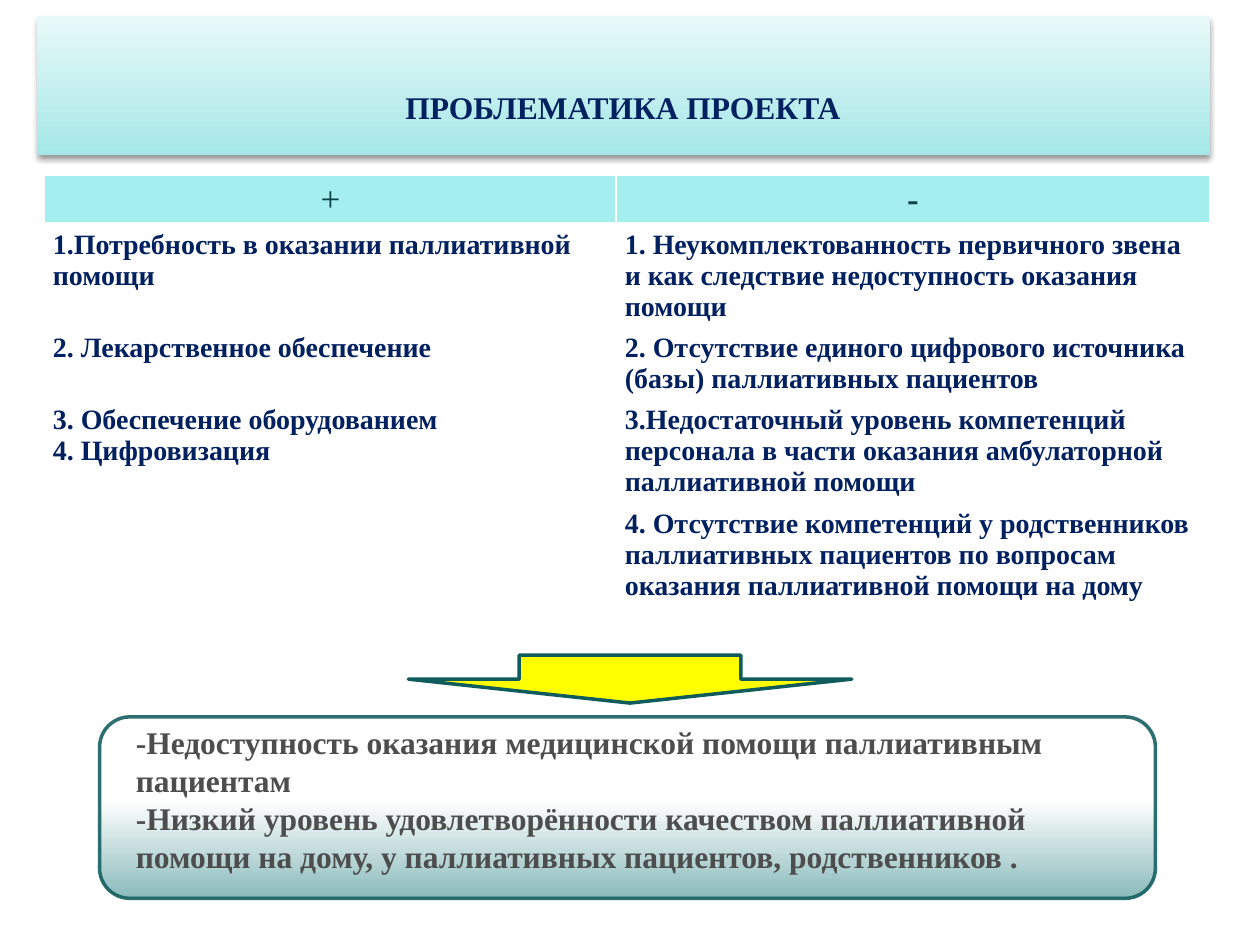
from lxml import etree
from pptx import Presentation
from pptx.dml.color import RGBColor
from pptx.enum import shapes, text
from pptx.oxml import ns
from pptx.util import Inches, Pt

TITLE = "ПРОБЛЕМАТИКА ПРОЕКТА"
ROWS = [
    (["+"], ["-"]),
    (["1.Потребность в оказании паллиативной помощи"],
     ["1. Неукомплектованность первичного звена и как следствие недоступность оказания помощи"]),
    (["2. Лекарственное обеспечение"],
     ["2. Отсутствие единого цифрового источника (базы) паллиативных пациентов"]),
    (["3. Обеспечение оборудованием", "4. Цифровизация"],
     ["3.Недостаточный уровень компетенций персонала в части оказания амбулаторной паллиативной помощи"]),
    ([], ["4. Отсутствие компетенций у родственников паллиативных пациентов по вопросам оказания паллиативной помощи на дому"]),
    ([], []),
    ([], []),
    ([], []),
]
RESULT = [
    "-Недоступность оказания медицинской помощи паллиативным пациентам",
    "-Низкий уровень удовлетворённости качеством паллиативной помощи на дому, у паллиативных пациентов, родственников .",
]
WIDTHS = [4.54, 4.71]
HEIGHTS = [0.35, 0.74, 0.51, 0.74, 0.74, 0.29, 0.22, 0.22]
FONT = "Times New Roman"
HEX = {"navy": "002060", "teal": "105C5D", "head": "A4EEF0", "ink": "0C4344",
       "white": "FFFFFF", "gray": "4D4D4D", "yellow": "FFFF00", "black": "000000"}
BANNER = [(0, "E8F9F9"), (100, "A5E7E7")]
PANEL = [(46, "FFFFFF"), (97, "91BEBF"), (100, "7DB8B9")]


def rgb(name):
    return RGBColor.from_string(HEX[name])


def sub(node, tag, **attrs):
    return etree.SubElement(node, ns.qn("a:" + tag), attrs)


def box(item):
    return [Inches(n) for n in item]


def write(frame, lines, size, color, bold=True, align=text.PP_ALIGN.LEFT):
    frame.word_wrap = True
    for i, line in enumerate(lines):
        para = frame.paragraphs[0] if i == 0 else frame.add_paragraph()
        para.text = line
        para.alignment = align
        font = para.font
        font.name, font.size, font.bold = FONT, Pt(size), bold
        font.color.rgb = rgb(color)


def shade(shape, stops):
    shape.fill.gradient()
    shape.fill.gradient_angle = 270
    group = shape.fill._xPr.find(".//" + ns.qn("a:gsLst"))
    for old in list(group):
        group.remove(old)
    for pos, color in stops:
        stop = sub(group, "gs", pos=str(pos * 1000))
        sub(stop, "srgbClr", val=color)


def edge(cell):
    props = cell._tc.get_or_add_tcPr()
    for side, width in zip("LRTB", (1, 1, 1, 3)):
        line = sub(props, "ln" + side, w=str(Pt(width)))
        sub(sub(line, "solidFill"), "srgbClr", val=HEX["white"])


def add_title(slide):
    title = slide.shapes.title
    title.left, title.top, title.width, title.height = box((0.29, 0.13, 9.31, 1.1))
    shade(title, BANNER)
    glow = sub(sub(title._element.spPr, "effectLst"), "outerShdw",
               blurRad=str(Pt(3)), dist=str(Pt(2)), dir="5400000", rotWithShape="0")
    sub(sub(glow, "srgbClr", val=HEX["black"]), "alpha", val="40000")
    frame = title.text_frame
    frame.vertical_anchor = text.MSO_ANCHOR.MIDDLE
    frame.margin_top, frame.margin_bottom = box((0.39, 0.05))
    write(frame, [TITLE], 18, "navy", align=text.PP_ALIGN.CENTER)


def add_grid(slide):
    grid = slide.shapes.add_table(len(ROWS), len(WIDTHS),
                                  *box((0.35, 1.39, sum(WIDTHS), sum(HEIGHTS)))).table
    grid.first_row = grid.horz_banding = False
    for col, width in zip(grid.columns, WIDTHS):
        col.width = Inches(width)
    for r, (row, height) in enumerate(zip(ROWS, HEIGHTS)):
        grid.rows[r].height = Inches(height)
        for c, lines in enumerate(row):
            cell = grid.cell(r, c)
            edge(cell)
            cell.fill.solid()
            cell.fill.fore_color.rgb = rgb("white" if r else "head")
            cell.margin_left = cell.margin_right = Inches(0.07)
            cell.margin_top = cell.margin_bottom = Inches(0.04)
            if r:
                write(cell.text_frame, lines, 16, "navy")
            else:
                write(cell.text_frame, lines, 20, "ink", c == 1, text.PP_ALIGN.CENTER)
    grid.cell(0, 0).text_frame.paragraphs[0].font.italic = True


def add_shape(slide, kind, place):
    shape = slide.shapes.add_shape(kind, *box(place))
    shape.shadow.inherit = False
    shape.line.color.rgb = rgb("teal")
    shape.line.width = Pt(2)
    return shape


def main():
    deck = Presentation()
    deck.slide_width, deck.slide_height = box((10, 7.5))
    slide = deck.slides.add_slide(deck.slide_layouts[5])
    add_title(slide)
    add_grid(slide)
    arrow = add_shape(slide, shapes.MSO_SHAPE.DOWN_ARROW, (3.24, 5.2, 3.52, 0.38))
    arrow.fill.solid()
    arrow.fill.fore_color.rgb = rgb("yellow")
    panel = add_shape(slide, shapes.MSO_SHAPE.ROUNDED_RECTANGLE, (0.79, 5.69, 8.38, 1.44))
    shade(panel, PANEL)
    tint = panel.line._ln.find(".//" + ns.qn("a:srgbClr"))
    sub(tint, "alpha", val="88000")
    note = slide.shapes.add_textbox(*box((0.98, 5.69, 8.03, 1.62)))
    write(note.text_frame, RESULT, 18, "gray")
    deck.save("out.pptx")


if __name__ == "__main__":
    main()
